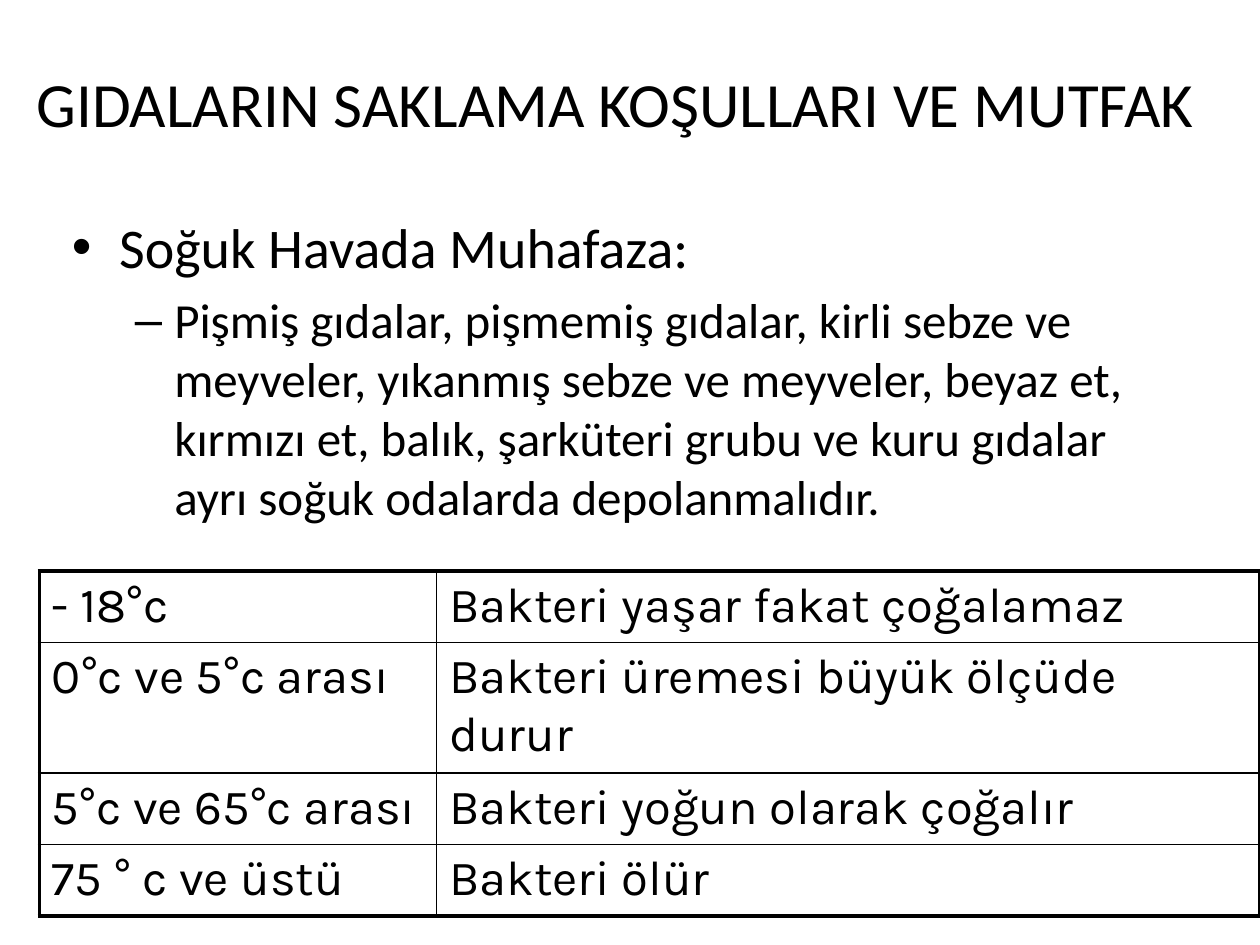
from pptx import Presentation
from pptx.dml.color import RGBColor
from pptx.enum.text import MSO_ANCHOR, PP_ALIGN
from pptx.oxml.ns import qn
from pptx.util import Pt
from lxml.etree import SubElement

MIDDLE = MSO_ANCHOR.MIDDLE
CENTER = PP_ALIGN.CENTER
LEFT = PP_ALIGN.LEFT
THIN, THICK = 1, 2.25


def color(code):
    return RGBColor.from_string(code)


def write(para, text, size=28, font="Calibri", ink="000000", align=LEFT,
          before=0, bullet=None, indent=0, hang=0):
    para.alignment = align
    para.space_before = Pt(before)
    run = para.add_run()
    run.text = text
    run.font.size = Pt(size)
    run.font.name = font
    run.font.color.rgb = color(ink)
    if bullet:
        props = para._p.get_or_add_pPr()
        props.set("marL", str(Pt(indent)))
        props.set("indent", str(-Pt(hang)))
        SubElement(props, qn("a:buFont"), typeface="Arial")
        SubElement(props, qn("a:buChar"), char=bullet)


class Page:
    font = "Calibri"
    cell_font = "Karla"
    ink = "000000"

    def __init__(self, slide):
        self.slide = slide

    def text(self, box, items, anchor=None):
        frame = self.slide.shapes.add_textbox(*map(Pt, box)).text_frame
        frame.word_wrap = True
        if anchor is not None:
            frame.vertical_anchor = anchor
        for i, (words, style) in enumerate(items):
            para = frame.add_paragraph() if i else frame.paragraphs[0]
            write(para, words, font=self.font, ink=self.ink, **style)

    def border(self, cell, sides):
        props = cell._tc.get_or_add_tcPr()
        for i, (side, width) in enumerate(sides.items()):
            line = props.makeelement(qn("a:ln" + side), {"w": str(Pt(width))})
            fill = SubElement(line, qn("a:solidFill"))
            SubElement(fill, qn("a:srgbClr"), val=self.ink)
            props.insert(i, line)

    def table(self, left, top, widths, height, rows):
        last, end = len(rows) - 1, len(widths) - 1
        grid = self.slide.shapes.add_table(
            len(rows), len(widths), Pt(left), Pt(top),
            Pt(sum(widths)), Pt(height * len(rows))).table
        grid.first_row = grid.horz_banding = False
        for col, width in zip(grid.columns, widths):
            col.width = Pt(width)
        for r, row in enumerate(rows):
            for c, words in enumerate(row):
                cell = grid.cell(r, c)
                cell.fill.background()
                write(cell.text_frame.paragraphs[0], words,
                      font=self.cell_font, ink=self.ink)
                # Thick outer frame, thin inner lines
                self.border(cell, {
                    "L": THICK if c == 0 else THIN,
                    "R": THICK if c == end else THIN,
                    "T": THICK if r == 0 else THIN,
                    "B": THICK if r == last else THIN})


def main():
    deck = Presentation()
    deck.slide_width, deck.slide_height = Pt(720), Pt(540)
    page = Page(deck.slides.add_slide(deck.slide_layouts[6]))

    # Title
    page.text((0, 22.5, 703.5, 72), [
        ("GIDALARIN SAKLAMA KOŞULLARI VE MUTFAK",
         dict(size=36, align=CENTER))], anchor=MIDDLE)

    # Storage rule
    page.text((34, 118, 650, 180), [
        ("Soğuk Havada Muhafaza:",
         dict(size=32, bullet="•", indent=27, hang=27)),
        ("Pişmiş gıdalar, pişmemiş gıdalar, kirli sebze ve meyveler, "
         "yıkanmış sebze ve meyveler, beyaz et, kırmızı et, balık, "
         "şarküteri grubu ve kuru gıdalar ayrı soğuk odalarda "
         "depolanmalıdır.",
         dict(before=5.6, bullet="–", indent=58.5, hang=22.5))])

    # Bacteria by temperature
    page.table(22.5, 326.25, (227, 470.5), 40.9, [
        ("- 18°c", "Bakteri yaşar fakat çoğalamaz"),
        ("0°c ve 5°c arası", "Bakteri üremesi büyük ölçüde durur"),
        ("5°c ve 65°c arası", "Bakteri yoğun olarak çoğalır"),
        ("75 ° c ve üstü", "Bakteri ölür")])

    deck.save("out.pptx")


if __name__ == "__main__":
    main()
